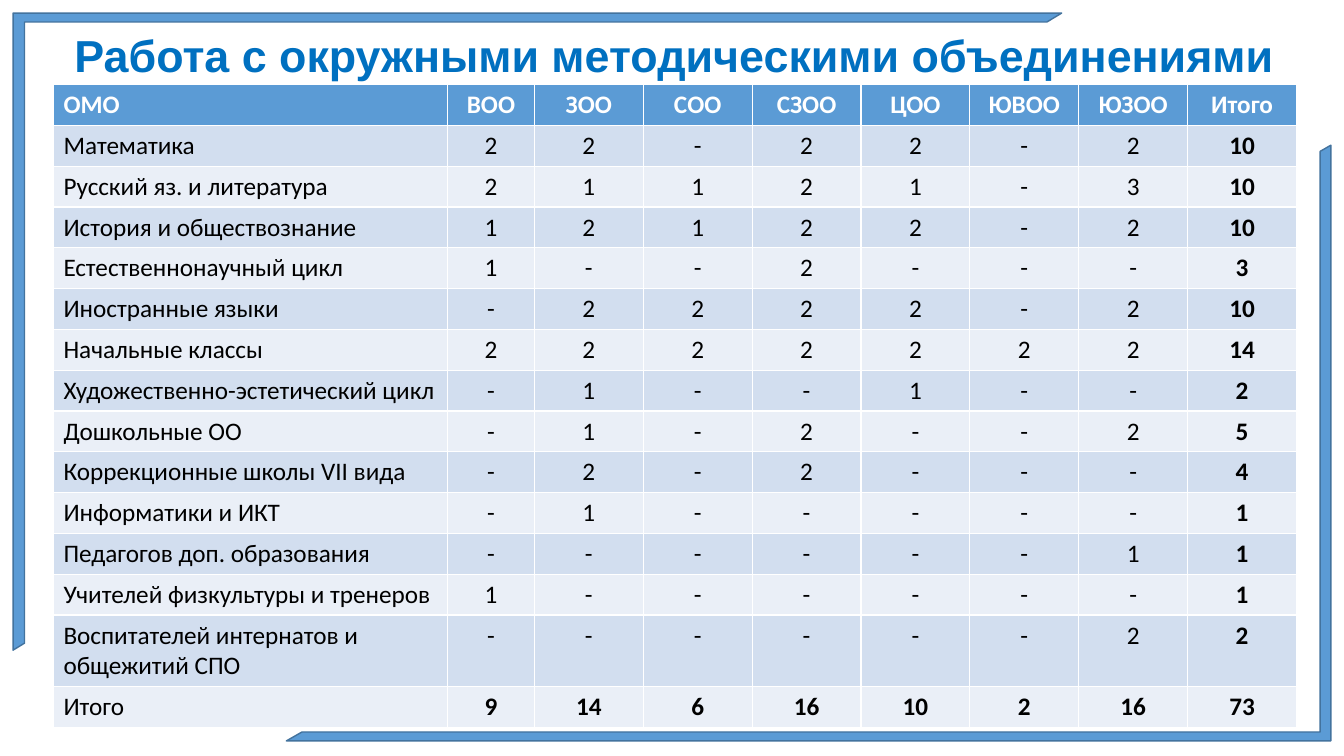
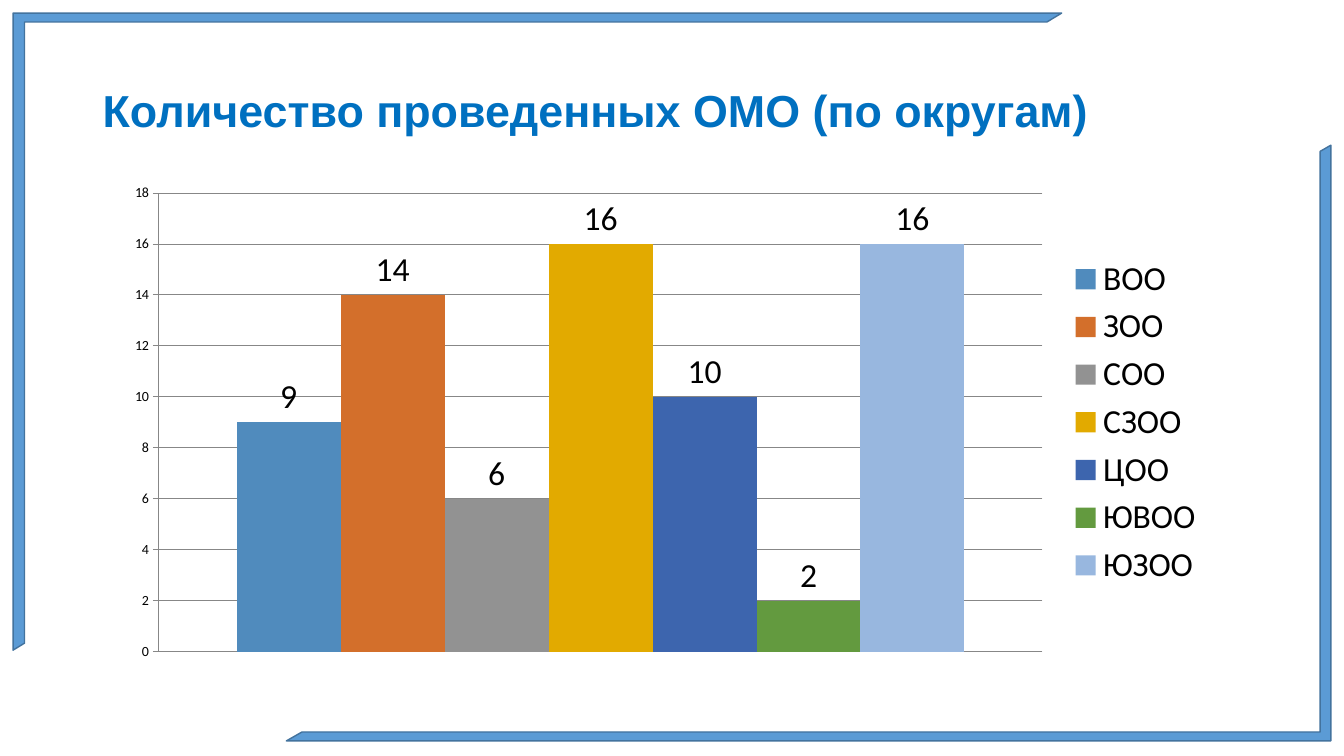
"""Build two slides on the work of district methodical associations."""
from pptx import Presentation
from pptx.chart.data import CategoryChartData
from pptx.dml.color import RGBColor
from pptx.enum.chart import XL_CHART_TYPE, XL_LABEL_POSITION, XL_LEGEND_POSITION, XL_TICK_LABEL_POSITION, XL_TICK_MARK
from pptx.enum.shapes import MSO_SHAPE
from pptx.enum.text import MSO_ANCHOR, PP_ALIGN
from pptx.util import Inches, Pt

COLUMN = XL_CHART_TYPE.COLUMN_CLUSTERED
ABOVE = XL_LABEL_POSITION.OUTSIDE_END
LEGEND_RIGHT = XL_LEGEND_POSITION.RIGHT
NO_LABELS = XL_TICK_LABEL_POSITION.NONE
TICK_OUT, TICK_NONE = XL_TICK_MARK.OUTSIDE, XL_TICK_MARK.NONE
HALF_FRAME = MSO_SHAPE.HALF_FRAME
MIDDLE = MSO_ANCHOR.MIDDLE
LEFT, CENTER = PP_ALIGN.LEFT, PP_ALIGN.CENTER

COLORS = {
    "frame": "5B9BD5", "frame_line": "43739E", "title": "0070C0",
    "header": "5B9BD5", "odd": "D2DEEF", "even": "EAEFF7",
    "white": "FFFFFF", "black": "000000", "grid": "878787",
}
TITLE_FONT, BODY_FONT = "Arial", "Calibri"

FRAMES = [
    ((0.13, 0.13, 10.4, 6.32), 0, (0.014, 0.018)),
    ((2.84, 1.44, 10.36, 5.91), 180, (0.015, 0.018)),
]

TABLE_TITLE = "Работа с окружными методическими объединениями"
CHART_TITLE = "Количество проведенных ОМО (по округам)"
TOTAL = "Итого"
DISTRICTS = ["ВОО", "ЗОО", "СОО", "СЗОО", "ЦОО", "ЮВОО", "ЮЗОО"]
BAR_COLORS = ["508BBD", "D36F2B", "929292", "E2AA00", "3D65AE", "639A3F", "98B7DF"]
MEETINGS = [
    ("Математика", (2, 2, 0, 2, 2, 0, 2)),
    ("Русский яз. и литература", (2, 1, 1, 2, 1, 0, 3)),
    ("История и обществознание", (1, 2, 1, 2, 2, 0, 2)),
    ("Естественнонаучный цикл", (1, 0, 0, 2, 0, 0, 0)),
    ("Иностранные языки", (0, 2, 2, 2, 2, 0, 2)),
    ("Начальные классы", (2, 2, 2, 2, 2, 2, 2)),
    ("Художественно-эстетический цикл", (0, 1, 0, 0, 1, 0, 0)),
    ("Дошкольные ОО", (0, 1, 0, 2, 0, 0, 2)),
    ("Коррекционные школы VII вида", (0, 2, 0, 2, 0, 0, 0)),
    ("Информатики и ИКТ", (0, 1, 0, 0, 0, 0, 0)),
    ("Педагогов доп. образования", (0, 0, 0, 0, 0, 0, 1)),
    ("Учителей физкультуры и тренеров", (1, 0, 0, 0, 0, 0, 0)),
    ("Воспитателей интернатов и общежитий СПО", (0, 0, 0, 0, 0, 0, 2)),
]
DISTRICT_TOTALS = [sum(column) for column in zip(*(counts for _, counts in MEETINGS))]

TABLE_BOX = (0.53, 0.84, 12.34, 6.38)
NAME_WIDTH, FIRST_WIDTH, DISTRICT_WIDTH = 3.91, 0.86, 1.08
TALL_ROW, TALL_HEIGHT = len(MEETINGS), 0.71
CHART_BOX = (1.12, 1.74, 10.93, 4.9)


def rgb(name):
    return RGBColor.from_string(COLORS[name])


def box(lengths):
    return [Inches(length) for length in lengths]


def write(tf, text, size=18, font=BODY_FONT, color="black", bold=False, align=LEFT, spacing=None):
    p = tf.paragraphs[0]
    p.alignment = align
    p.line_spacing = spacing
    r = p.add_run()
    r.text = text
    r.font.size, r.font.name, r.font.bold = Pt(size), font, bold
    r.font.color.rgb = rgb(color)


def style_font(font, size):
    font.size, font.name = Pt(size), BODY_FONT
    font.color.rgb = rgb("black")


def add_slide(prs, title, title_box, align):
    slide = prs.slides.add_slide(prs.slide_layouts[6])
    for place, rotation, adjustments in FRAMES:
        sp = slide.shapes.add_shape(HALF_FRAME, *box(place))
        sp.rotation = rotation
        for i, value in enumerate(adjustments):
            sp.adjustments[i] = value
        sp.shadow.inherit = False
        sp.fill.solid()
        sp.fill.fore_color.rgb = rgb("frame")
        sp.line.color.rgb = rgb("frame_line")
        sp.line.width = Pt(1)
    tf = slide.shapes.add_textbox(*box(title_box)).text_frame
    tf.word_wrap = True
    tf.vertical_anchor = MIDDLE
    write(tf, title, size=32, font=TITLE_FONT, color="title", bold=True, align=align, spacing=0.9)
    return slide


def add_meetings_table(slide):
    rows = [["ОМО", *DISTRICTS, TOTAL]]
    rows += [[name, *(n or "-" for n in counts), sum(counts)] for name, counts in MEETINGS]
    rows.append([TOTAL, *DISTRICT_TOTALS, sum(DISTRICT_TOTALS)])
    last_row, last_col = len(rows) - 1, len(rows[0]) - 1
    table = slide.shapes.add_table(len(rows), len(rows[0]), *box(TABLE_BOX)).table

    widths = [NAME_WIDTH, FIRST_WIDTH] + [DISTRICT_WIDTH] * (last_col - 1)
    for column, width in zip(table.columns, widths):
        column.width = Inches(width)
    row_height = (TABLE_BOX[3] - TALL_HEIGHT) / last_row
    for i, row in enumerate(rows):
        table.rows[i].height = Inches(TALL_HEIGHT if i == TALL_ROW else row_height)
        fill = "header" if i == 0 else "odd" if i % 2 else "even"
        for j, value in enumerate(row):
            cell = table.cell(i, j)
            cell.fill.solid()
            cell.fill.fore_color.rgb = rgb(fill)
            write(cell.text_frame, str(value),
                  color="black" if i else "white",
                  bold=i == 0 or j == last_col or (i == last_row and j > 0),
                  align=CENTER if j else LEFT)


def add_totals_chart(slide):
    data = CategoryChartData()
    data.categories = ["1"]
    for district, total in zip(DISTRICTS, DISTRICT_TOTALS):
        data.add_series(district, [total])
    chart = slide.shapes.add_chart(COLUMN, *box(CHART_BOX), data).chart
    style_font(chart.font, 10)
    chart.has_title = False
    chart.has_legend = True
    chart.legend.position = LEGEND_RIGHT
    chart.legend.include_in_layout = False
    style_font(chart.legend.font, 24)

    chart.category_axis.visible = False
    chart.category_axis.tick_label_position = NO_LABELS
    axis = chart.value_axis
    axis.minimum_scale, axis.maximum_scale, axis.major_unit = 0, 18, 2
    axis.major_tick_mark, axis.minor_tick_mark = TICK_OUT, TICK_NONE
    axis.has_major_gridlines = True
    for line in (axis.format.line, axis.major_gridlines.format.line):
        line.color.rgb = rgb("grid")
        line.width = Pt(0.75)

    plot = chart.plots[0]
    plot.gap_width, plot.overlap = 150, 0
    plot.vary_by_categories = False
    for series, color in zip(plot.series, BAR_COLORS):
        series.format.fill.solid()
        series.format.fill.fore_color.rgb = RGBColor.from_string(color)
        labels = series.data_labels
        labels.show_value = True
        labels.position = ABOVE
        style_font(labels.font, 24)


def main():
    prs = Presentation()
    prs.slide_width, prs.slide_height = Inches(13.33), Inches(7.5)
    add_meetings_table(add_slide(prs, TABLE_TITLE, (0.36, 0.17, 12.66, 0.81), CENTER))
    add_totals_chart(add_slide(prs, CHART_TITLE, (0.92, 0.4, 11.5, 1.45), LEFT))
    prs.save("out.pptx")


if __name__ == "__main__":
    main()
